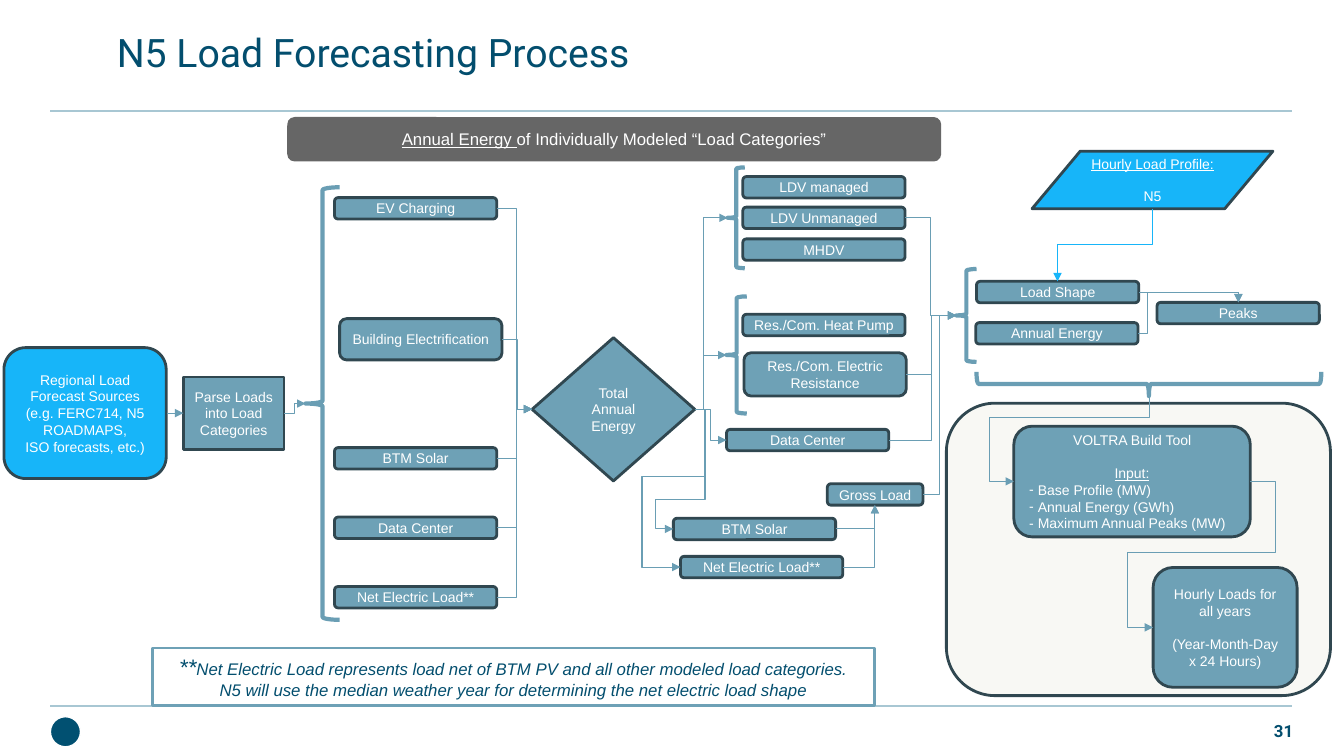
from dataclasses import dataclass

from lxml.etree import SubElement
from pptx import Presentation
from pptx.dml.color import RGBColor
from pptx.enum.shapes import MSO_CONNECTOR, MSO_SHAPE
from pptx.enum.text import MSO_ANCHOR, PP_ALIGN
from pptx.oxml.ns import qn
from pptx.util import Cm, Pt


@dataclass(frozen=True)
class Theme:
    navy: str = "034E6E"
    dot: str = "015071"
    steel: str = "6EA1B6"
    arrow: str = "6A9EB4"
    outline: str = "304750"
    rule: str = "A8C7D3"
    cyan: str = "17B5F9"
    gray: str = "666666"
    cream: str = "EEECE1"
    white: str = "FFFFFF"
    body: str = "Arial"
    heading: str = "Roboto"
    title_size: int = 28
    mark_size: int = 16
    note_size: int = 12
    box_size: int = 10
    gap: float = 11.5


T = Theme()
BOX_W, BOX_H = 4.09, 0.54


def write(p, text, size=T.box_size, color=T.white, font=T.body,
          bold=False, italic=False, underline=False):
    r = p.add_run()
    r.text = text
    f = r.font
    f.size, f.name = Pt(size), font
    f.bold, f.italic, f.underline = bold, italic, underline
    f.color.rgb = RGBColor.from_string(color)


def paragraph(tf, first=False, align=PP_ALIGN.CENTER, before=0):
    p = tf.paragraphs[0] if first else tf.add_paragraph()
    p.alignment = align
    if before:
        p.space_before = Pt(before)
    return p


def dash_item(tf, text):
    p = paragraph(tf, align=PP_ALIGN.LEFT)
    pPr = p._p.get_or_add_pPr()
    pPr.set("marL", str(Cm(0.22)))
    pPr.set("indent", str(Cm(-0.22)))
    SubElement(pPr, qn("a:buFont")).set("typeface", T.body)
    SubElement(pPr, qn("a:buChar")).set("char", "-")
    write(p, text)


def shape(s, kind, x, y, w, h, fill=T.steel, line=T.outline, width=2):
    sp = s.shapes.add_shape(kind, Cm(x), Cm(y), Cm(w), Cm(h))
    sp.shadow.inherit = False
    if fill:
        sp.fill.solid()
        sp.fill.fore_color.rgb = RGBColor.from_string(fill)
    else:
        sp.fill.background()
    if line:
        sp.line.color.rgb = RGBColor.from_string(line)
        sp.line.width = Pt(width)
    else:
        sp.line.fill.background()
    sp.text_frame.word_wrap = True
    sp.text_frame.vertical_anchor = MSO_ANCHOR.MIDDLE
    return sp


def box(s, text, x, y, w=BOX_W, h=BOX_H, kind=MSO_SHAPE.ROUNDED_RECTANGLE, **look):
    tf = shape(s, kind, x, y, w, h, **look).text_frame
    for i, line in enumerate(text.split("\n")):
        write(paragraph(tf, first=i == 0), line)
    return tf


def brace(s, x, y, w, h, rotation=0):
    sp = shape(s, MSO_SHAPE.LEFT_BRACE, x, y, w, h, fill=None, line=T.arrow, width=3)
    sp.rotation = rotation


def connector(s, kind, start, end, color, width=0.75, head=True):
    c = s.shapes.add_connector(kind, *(Cm(v) for v in (*start, *end)))
    c.line.color.rgb = RGBColor.from_string(color)
    c.line.width = Pt(width)
    if head:
        SubElement(c.line._get_or_add_ln(), qn("a:tailEnd")).set("type", "triangle")
    SubElement(c.element.spPr, qn("a:effectLst"))
    return c


def elbow(s, start, end, *bends, down=False, color=T.arrow):
    (x1, y1), (x2, y2) = start, end
    origin, span = (x1, y1), (x2 - x1, y2 - y1)
    if down:
        cx, cy = (x1 + x2) / 2, (y1 + y2) / 2
        dx, dy = (x1 - x2) / 2, (y2 - y1) / 2
        origin, span = (y1, x1), (y2 - y1, x2 - x1)
        start, end = (cx - dy, cy - dx), (cx + dy, cy + dx)
    c = connector(s, MSO_CONNECTOR.ELBOW, start, end, color)
    if down:
        c.element.spPr.xfrm.set("rot", "5400000")
    geom = c.element.spPr.find(qn("a:prstGeom"))
    geom.set("prst", f"bentConnector{len(bends) + 2}")
    guides = geom.find(qn("a:avLst"))
    if guides is None:
        guides = SubElement(geom, qn("a:avLst"))
    for i, bend in enumerate(bends):
        ratio = (bend - origin[i % 2]) / span[i % 2]
        gd = SubElement(guides, qn("a:gd"))
        gd.set("name", f"adj{i + 1}")
        gd.set("fmla", f"val {round(ratio * 100000)}")


def frame(s):
    title = s.shapes.title
    title.left, title.top, title.width, title.height = Cm(2.69), Cm(-0.1), Cm(29.69), Cm(2.79)
    tf = title.text_frame
    tf.word_wrap = True
    tf.vertical_anchor = MSO_ANCHOR.MIDDLE
    write(paragraph(tf, first=True, align=PP_ALIGN.LEFT), "N5 Load Forecasting Process",
          size=T.title_size, color=T.navy, font=T.heading)
    for y in (2.8, 17.78):
        connector(s, MSO_CONNECTOR.STRAIGHT, (1.27, y), (32.56, y), T.rule, 1.5, head=False)
    shape(s, MSO_SHAPE.OVAL, 1.27, 18.06, 0.76, 0.76, fill=T.dot, line=T.white, width=1)
    tf = s.shapes.add_textbox(Cm(30.05), Cm(17.78), Cm(2.54), Cm(1.27)).text_frame
    tf.margin_left = tf.margin_right = tf.margin_top = tf.margin_bottom = 0
    tf.word_wrap = True
    tf.vertical_anchor = MSO_ANCHOR.MIDDLE
    write(paragraph(tf, first=True, align=PP_ALIGN.RIGHT), "31",
          size=T.note_size, color=T.navy, font=T.heading, bold=True)


def boxes(s):
    panel = shape(s, MSO_SHAPE.ROUNDED_RECTANGLE, 23.85, 10.16, 9.68, 7.37, fill=T.cream)
    color = panel.element.spPr.find(qn("a:solidFill"))[0]
    SubElement(color, qn("a:alpha")).set("val", "36000")

    for text, x, y in (
        ("EV Charging", 8.43, 4.98), ("BTM Solar", 8.43, 11.28),
        ("Data Center", 8.43, 13.03), ("Net Electric Load**", 8.43, 14.78),
        ("LDV managed", 18.72, 4.45), ("LDV Unmanaged", 18.72, 5.22),
        ("MHDV", 18.72, 6.02), ("Res./Com. Heat Pump", 18.72, 7.92),
        ("Data Center", 18.31, 10.82), ("BTM Solar", 16.97, 13.06),
        ("Net Electric Load**", 17.15, 14.02), ("Load Shape", 24.61, 7.09),
        ("Annual Energy", 24.59, 8.13), ("Peaks", 29.16, 7.62),
    ):
        box(s, text, x, y)
    box(s, "Gross Load", 20.85, 12.19, w=2.41)
    box(s, "Building Electrification", 8.56, 8.03, h=1.04)
    box(s, "Res./Com. Electric Resistance", 18.75, 8.89, h=1.09)
    box(s, "Regional Load Forecast Sources\n(e.g. FERC714, N5 ROADMAPS,\nISO forecasts, etc.)",
        0.1, 8.76, h=3.3, fill=T.cyan)
    box(s, "Parse Loads into Load Categories", 4.62, 9.5, 2.54, 1.83,
        kind=MSO_SHAPE.FLOWCHART_PROCESS)
    box(s, "Total Annual Energy", 13.41, 8.51, 4.1, 3.61, kind=MSO_SHAPE.FLOWCHART_DECISION)

    tf = box(s, "Hourly Loads for all years", 29.06, 14.3, 3.63, 3.02)
    write(paragraph(tf, before=T.gap), "(Year-Month-Day x 24 Hours)")

    tf = box(s, "VOLTRA Build Tool", 25.55, 10.74, 5.96, 2.79)
    write(paragraph(tf, before=T.gap), "Input:", underline=True)
    for text in ("Base Profile (MW)", "Annual Energy (GWh)", "Maximum Annual Peaks (MW)"):
        dash_item(tf, text)

    tf = shape(s, MSO_SHAPE.FLOWCHART_DATA, 26.01, 3.81, 6.07, 1.45, fill=T.cyan).text_frame
    write(paragraph(tf, first=True), "Hourly Load Profile:", underline=True)
    write(paragraph(tf, before=T.gap), "N5")


def captions(s):
    tf = shape(s, MSO_SHAPE.ROUNDED_RECTANGLE, 7.24, 2.95, 16.48, 1.12,
               fill=T.gray, line=None).text_frame
    p = paragraph(tf, first=True)
    write(p, "Annual Energy ", size=T.note_size, underline=True)
    write(p, "of Individually Modeled “Load Categories”", size=T.note_size)

    tf = shape(s, MSO_SHAPE.RECTANGLE, 3.84, 16.33, 18.21, 1.45,
               fill=T.white, line=T.steel).text_frame
    tf.vertical_anchor = MSO_ANCHOR.TOP
    note = dict(color=T.navy, italic=True)
    p = paragraph(tf, first=True)
    write(p, "**", size=T.mark_size, **note)
    write(p, "Net Electric Load represents load net of BTM PV and all other modeled load categories.",
          size=T.note_size, **note)
    write(paragraph(tf),
          "N5 will use the median weather year for determining the net electric load shape",
          size=T.note_size, **note)


def flows(s):
    for x, y, w, h in ((7.7, 4.72, 0.86, 10.9), (18.34, 4.22, 0.43, 2.54),
                       (18.31, 7.47, 0.51, 2.95), (24.1, 6.78, 0.51, 2.34)):
        brace(s, x, y, w, h)
    brace(s, 28.65, 5.33, 0.61, 8.69, rotation=270)

    connector(s, MSO_CONNECTOR.STRAIGHT, (4.2, 10.41), (4.62, 10.41), T.arrow)
    elbow(s, (7.16, 10.41), (7.7, 10.17), 7.43)
    total_in, total_out = (13.41, 10.31), (17.51, 10.31)
    for start in ((12.52, 5.25), (12.65, 8.55), (12.52, 11.55), (12.52, 13.3), (12.52, 15.05)):
        elbow(s, start, total_in, 13.03)
    for end in ((18.31, 8.95), (18.34, 5.49)):
        elbow(s, (17.81, 10.31), end, 17.74)
    elbow(s, total_out, (18.31, 11.09), 17.91)
    elbow(s, total_out, (16.97, 13.33), 17.77, 12.6, 16.51)
    elbow(s, total_out, (17.15, 14.29), 17.75, 12.01, 16.18)
    for start in ((21.06, 13.33), (21.24, 14.29)):
        elbow(s, start, (22.05, 12.73))
    for start, bend in (((22.81, 5.49), 23.45), ((22.83, 9.43), 23.47),
                        ((22.4, 11.09), 23.47), ((23.26, 12.46), 23.68)):
        elbow(s, start, (24.1, 7.95), bend)
    elbow(s, (28.7, 7.36), (31.21, 7.62))
    elbow(s, (28.68, 8.4), (31.21, 7.62), 28.93, 7.37)
    elbow(s, (28.96, 9.98), (25.55, 12.13), 10.52, 24.94, down=True)
    elbow(s, (31.51, 12.13), (29.06, 15.81), 32.15, 13.92, 28.42)
    elbow(s, (29.05, 5.26), (26.65, 7.09), 6.17, down=True, color=T.cyan)


def main():
    prs = Presentation()
    prs.slide_width, prs.slide_height = Cm(33.87), Cm(19.05)
    s = prs.slides.add_slide(prs.slide_layouts[5])
    frame(s)
    boxes(s)
    flows(s)
    captions(s)
    prs.save("out.pptx")


if __name__ == "__main__":
    main()
